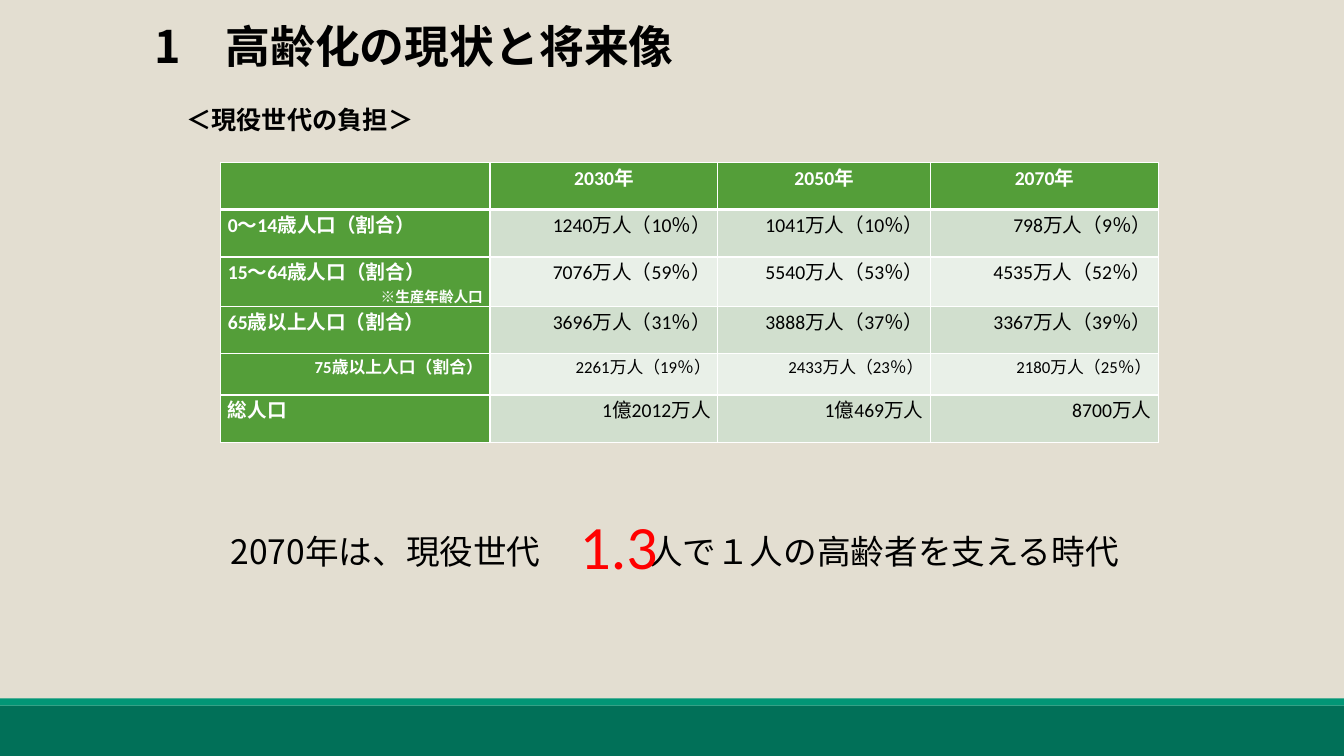
from lxml import etree
from pptx import Presentation
from pptx.dml.color import RGBColor
from pptx.enum import shapes, text
from pptx.oxml import ns
from pptx.util import Inches, Pt

BLACK = RGBColor(0x00, 0x00, 0x00)
WHITE = RGBColor(0xFF, 0xFF, 0xFF)
RED = RGBColor(0xFF, 0x00, 0x00)
BEIGE = RGBColor(0xE3, 0xDE, 0xD1)
HEAD_GREEN = RGBColor(0x54, 0x9E, 0x39)
BAND_DARK = RGBColor(0xD1, 0xDF, 0xCE)
BAND_LIGHT = RGBColor(0xE9, 0xF0, 0xE8)
FOOTER_DARK = RGBColor(0x01, 0x70, 0x58)
FOOTER_LIGHT = RGBColor(0x02, 0x96, 0x76)

LATIN, JAPANESE = "Calibri", "Noto Sans CJK JP"
LEFT, RIGHT = text.PP_ALIGN.LEFT, text.PP_ALIGN.RIGHT
CENTER, JUSTIFY = text.PP_ALIGN.CENTER, text.PP_ALIGN.JUSTIFY

FOOTER_BARS = [((0, 7, 13.33, 0.5), FOOTER_DARK),
               ((0, 6.93, 13.33, 0.07), FOOTER_LIGHT)]

# position, wrap, character format, runs as (wording, Latin font)
CAPTIONS = [
    ((1.43, 0.14, 5.49, 0.64), False, {"size": Pt(32), "bold": True},
     [("1", JAPANESE), ("　高齢化の現状と将来像", LATIN)]),
    ((1.75, 0.99, 2.49, 0.4), False, {"size": Pt(18), "bold": True},
     [("＜現役世代の負担＞", JAPANESE)]),
    ((2.19, 5.22, 9.24, 0.5), True, {"size": Pt(24)},
     [("2070", JAPANESE), ("年は、現役世代\t人で１人の高齢者を支える時代", LATIN)]),
    ((5.65, 4.99, 0.98, 0.84), False, {"size": Pt(44), "color": RED},
     [("1.3", LATIN)]),
]
RATIO_GAP_END = 4.15  # where the sentence resumes after the large ratio

YEARS = ["", "2030年", "2050年", "2070年"]
# label, label alignment, text size, figures
AGE_GROUPS = [
    ("0～14歳人口（割合）", JUSTIFY, 14,
     ["1240万人（10％）", "1041万人（10％）", "798万人（9％）"]),
    ("15～64歳人口（割合）", JUSTIFY, 14,
     ["7076万人（59％）", "5540万人（53％）", "4535万人（52％）"]),
    ("65歳以上人口（割合）", JUSTIFY, 14,
     ["3696万人（31％）", "3888万人（37％）", "3367万人（39％）"]),
    ("75歳以上人口（割合）", RIGHT, 12,
     ["2261万人（19％）", "2433万人（23％）", "2180万人（25％）"]),
    ("総人口", JUSTIFY, 14,
     ["1億2012万人", "1億469万人", "8700万人"]),
]
WORKING_AGE_ROW, WORKING_AGE_NOTE = 2, "※生産年齢人口"
TABLE_AT = (2.19, 1.61, 9.29, 2.78)
COLUMN_WIDTHS = [2.67, 2.26, 2.11, 2.26]
ROW_HEIGHTS = [0.47, 0.47, 0.49, 0.47, 0.41, 0.47]
CELL_FORMAT = {"margin_left": Inches(0.07), "margin_right": Inches(0.07),
               "margin_top": 0, "margin_bottom": 0}


def inches(box):
    return [Inches(length) for length in box]


def add_run(paragraph, wording, latin, size, bold=False, color=BLACK):
    run = paragraph.add_run()
    run.text = wording
    for name, value in {"name": latin, "size": size, "bold": bold}.items():
        setattr(run.font, name, value)
    run.font.color.rgb = color
    east_asian = etree.SubElement(run.font._element, ns.qn("a:ea"))
    east_asian.set("typeface", JAPANESE)


def add_tab_stop(paragraph, position):
    stops = etree.SubElement(paragraph._p.get_or_add_pPr(), ns.qn("a:tabLst"))
    etree.SubElement(stops, ns.qn("a:tab"), pos=str(Inches(position)), algn="l")


def add_caption(slide, box, wrap, style, runs):
    frame = slide.shapes.add_textbox(*inches(box)).text_frame
    frame.word_wrap = wrap
    sentence = frame.paragraphs[0]
    for wording, latin in runs:
        if "\t" in wording:
            add_tab_stop(sentence, RATIO_GAP_END)
        add_run(sentence, wording, latin, **style)


def add_borders(cell, row):
    """Rule the cell in white, heavier between the header and the body."""
    properties = cell._tc.get_or_add_tcPr()
    for side in "LRTB":
        heavy = (row, side) in [(0, "B"), (1, "T")]
        line = etree.SubElement(properties, ns.qn(f"a:ln{side}"),
                                w=str(Pt(3 if heavy else 1)))
        fill = etree.SubElement(line, ns.qn("a:solidFill"))
        etree.SubElement(fill, ns.qn("a:srgbClr"), val=str(WHITE))


def fill_cell(cell, row, column, wording, align, size):
    header = row == 0 or column == 0
    add_borders(cell, row)
    cell.fill.solid()
    band = BAND_DARK if row % 2 else BAND_LIGHT
    cell.fill.fore_color.rgb = HEAD_GREEN if header else band
    for name, value in CELL_FORMAT.items():
        setattr(cell, name, value)
    if wording:
        paragraph = cell.text_frame.paragraphs[0]
        paragraph.alignment = align
        add_run(paragraph, wording, LATIN, Pt(size), header,
                WHITE if header else BLACK)


def add_population_table(slide):
    rows = [(YEARS, [CENTER] * len(YEARS), 14)]
    for label, align, size, figures in AGE_GROUPS:
        rows.append(([label, *figures], [align] + [RIGHT] * len(figures), size))
    table = slide.shapes.add_table(len(rows), len(YEARS), *inches(TABLE_AT)).table
    for column, width in zip(table.columns, COLUMN_WIDTHS):
        column.width = Inches(width)
    for row, height in zip(table.rows, ROW_HEIGHTS):
        row.height = Inches(height)
    for r, (wordings, aligns, size) in enumerate(rows):
        for c, (wording, align) in enumerate(zip(wordings, aligns)):
            fill_cell(table.cell(r, c), r, c, wording, align, size)
    note = table.cell(WORKING_AGE_ROW, 0).text_frame.add_paragraph()
    note.alignment = RIGHT
    add_run(note, WORKING_AGE_NOTE, JAPANESE, Pt(10.5), True, WHITE)


def main():
    deck = Presentation()
    deck.slide_width, deck.slide_height = Inches(13.33), Inches(7.5)
    slide = deck.slides.add_slide(deck.slide_layouts[6])
    slide.background.fill.solid()
    slide.background.fill.fore_color.rgb = BEIGE
    for box, color in FOOTER_BARS:
        bar = slide.shapes.add_shape(shapes.MSO_SHAPE.RECTANGLE, *inches(box))
        bar.shadow.inherit = False
        bar.fill.solid()
        bar.fill.fore_color.rgb = color
        bar.line.fill.background()
    for caption in CAPTIONS:
        add_caption(slide, *caption)
    add_population_table(slide)
    deck.save("out.pptx")


if __name__ == "__main__":
    main()
